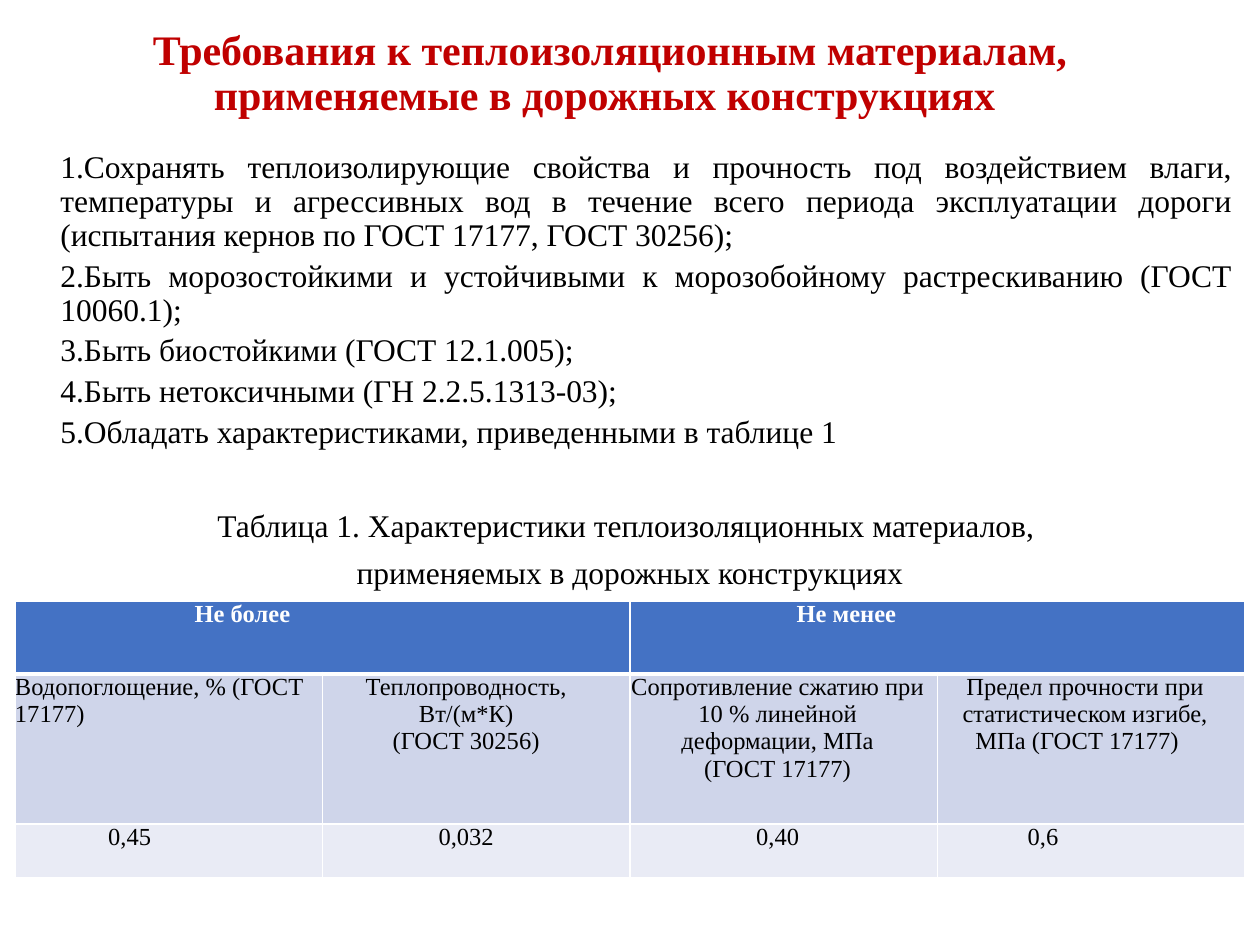
from lxml.etree import SubElement
from pptx import Presentation
from pptx.dml.color import RGBColor
from pptx.enum.text import MSO_ANCHOR as Anchor, PP_ALIGN as Align
from pptx.oxml.ns import qn
from pptx.util import Emu, Pt

COLORS = {"title": "C00000", "text": "000000", "white": "FFFFFF",
          "header": "4472C4", "label": "CFD5EA", "value": "E9EBF5"}
FONT = "Times New Roman"
REQUIREMENTS = [
    "1.Сохранять теплоизолирующие свойства и прочность под воздействием влаги, "
    "температуры и агрессивных вод в течение всего периода эксплуатации дороги "
    "(испытания кернов по ГОСТ 17177, ГОСТ 30256);",
    "2.Быть морозостойкими и устойчивыми к морозобойному растрескиванию (ГОСТ 10060.1);",
    "3.Быть биостойкими (ГОСТ 12.1.005);",
    "4.Быть нетоксичными (ГН 2.2.5.1313-03);",
    "5.Обладать характеристиками, приведенными в таблице 1",
]
CAPTION = ["Таблица 1. Характеристики теплоизоляционных материалов, ",
           "применяемых в дорожных конструкциях"]
HEADERS = [("Не более", 160), ("Не менее", 182)]
LABELS = [
    (["Водопоглощение, % (ГОСТ 17177)"], 0),
    (["Теплопроводность, Вт/(м*К)", "(ГОСТ 30256)"], 20),
    (["Сопротивление сжатию при 10 % линейной деформации, МПа", "(ГОСТ 17177)"], 12),
    (["Предел прочности при статистическом изгибе,", "МПа (ГОСТ 17177)"], 12),
]
VALUES = [("0,45", 78), ("0,032", 20), ("0,40", 12), ("0,6", 96)]


def px(length):
    """Turn slide px into EMU."""
    return Emu(round(length * 914400 / 126))


def color(name):
    """Look up a named colour."""
    return RGBColor.from_string(COLORS[name])


def write(frame, lines, size, ink, align, bold=False):
    """Fill a text frame with paragraphs of one style and return them."""
    frame.word_wrap = True
    frame.text = "\n".join(lines)
    for paragraph in frame.paragraphs:
        paragraph.alignment = align
        font = paragraph.font
        font.name, font.size, font.bold = FONT, Pt(size), bold
        font.color.rgb = color(ink)
    return frame.paragraphs


def indent(paragraph, length):
    """Set the left margin of a paragraph."""
    paragraph._p.get_or_add_pPr().set("marL", str(px(length)))


def add_title(slide, box):
    """Add the slide heading."""
    frame = slide.shapes.add_textbox(*map(px, box)).text_frame
    frame.vertical_anchor = Anchor.MIDDLE
    heading = "Требования к теплоизоляционным материалам, применяемые в дорожных конструкциях "
    write(frame, [heading], 24, "title", Align.CENTER, True)[0].line_spacing = 0.9


def add_body(slide, box):
    """Add the requirements and the table caption."""
    frame = slide.shapes.add_textbox(*map(px, box)).text_frame
    paragraphs = write(frame, REQUIREMENTS + CAPTION, 18, "text", Align.JUSTIFY)
    count = len(REQUIREMENTS)
    for index, paragraph in enumerate(paragraphs):
        is_caption = index >= count
        paragraph.line_spacing = 0.9
        paragraph.space_before = Pt(7.5 if is_caption else 3.8)
        indent(paragraph, 15 if is_caption else 48)
        if is_caption:
            paragraph.alignment = Align.CENTER
    paragraphs[count].space_before = Pt(34.5)


def style_cell(cell, fill, bottom=1):
    """Fill a cell and draw its white borders."""
    properties = cell._tc.get_or_add_tcPr()
    for side, width in (("L", 1), ("R", 1), ("T", 1), ("B", bottom)):
        line = SubElement(properties, qn(f"a:ln{side}"), w=str(Pt(width)))
        solid = SubElement(line, qn("a:solidFill"))
        SubElement(solid, qn("a:srgbClr"), val=COLORS["white"])
    cell.fill.solid()
    cell.fill.fore_color.rgb = color(fill)


def fill_cell(cell, lines, right, ink="text", bold=False):
    """Write centred cell text with the given right margin."""
    cell.margin_left = cell.margin_top = cell.margin_bottom = 0
    cell.margin_right = px(right)
    return write(cell.text_frame, lines, 14, ink, Align.CENTER, bold)


def add_properties_table(slide, box, heights):
    """Add the table of material properties."""
    table = slide.shapes.add_table(len(heights), len(LABELS), *map(px, box)).table
    for column in table.columns:
        column.width = px(box[2] / len(LABELS))
    for row, height, fill in zip(table.rows, heights, ("header", "label", "value")):
        row.height = px(height)
        for cell in row.cells:
            style_cell(cell, fill, 3 if fill == "header" else 1)
    for index, (text, right) in enumerate(HEADERS):
        cell = table.cell(0, 2 * index)
        cell.merge(table.cell(0, 2 * index + 1))
        fill_cell(cell, [text], right, "white", True)
    for index, (label, value) in enumerate(zip(LABELS, VALUES)):
        fill_cell(table.cell(1, index), *label)
        fill_cell(table.cell(2, index), [value[0]], value[1])
    first = table.cell(1, 0).text_frame.paragraphs[0]
    last = table.cell(1, 3).text_frame.paragraphs[-1]
    first.alignment = last.alignment = Align.LEFT
    indent(last, 38)


def main():
    """Build and save the presentation."""
    presentation = Presentation()
    presentation.slide_width, presentation.slide_height = px(1260), px(945)
    slide = presentation.slides.add_slide(presentation.slide_layouts[6])
    add_title(slide, (134, 55, 952, 39))
    add_body(slide, (0, 145, 1245, 708))
    add_properties_table(slide, (15, 601, 1230, 277), (73, 150, 54))
    presentation.save("out.pptx")


if __name__ == "__main__":
    main()
